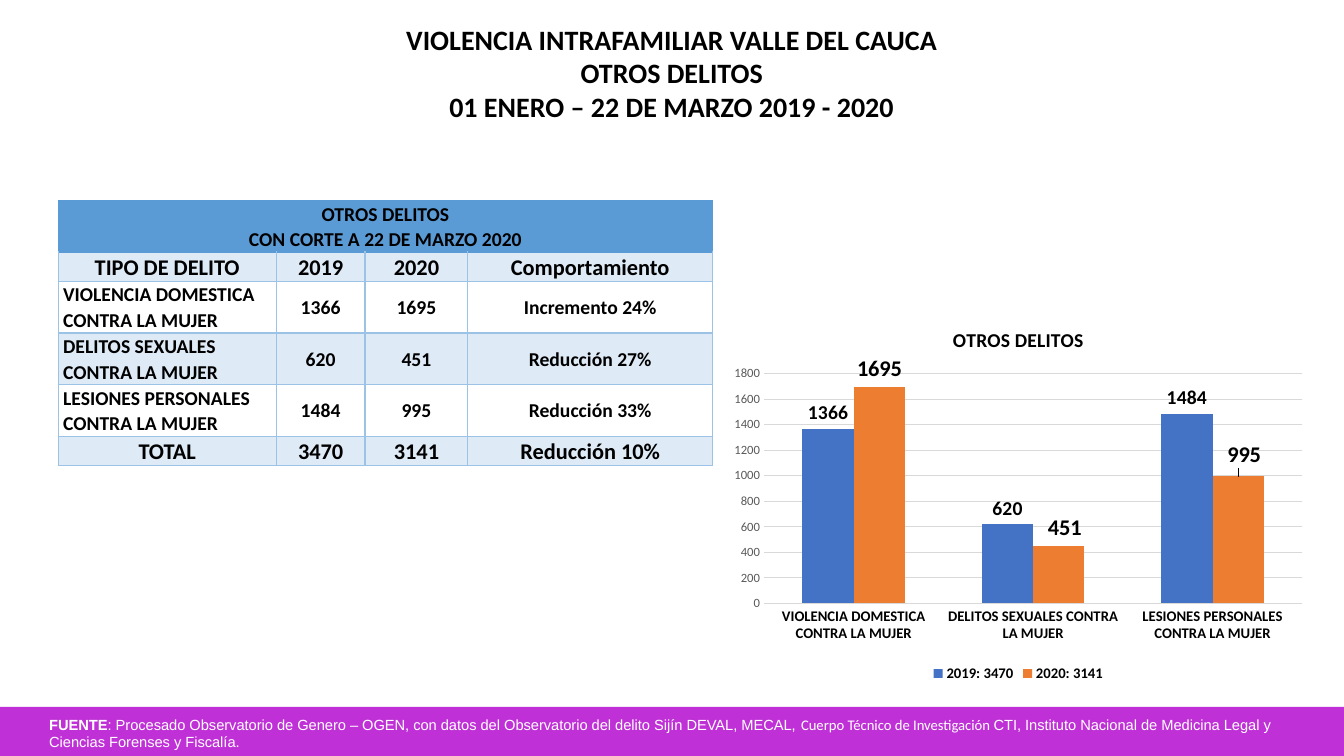
from lxml.etree import SubElement
from pptx import Presentation
from pptx.chart.data import CategoryChartData
from pptx.dml.color import RGBColor
from pptx.enum.chart import XL_CHART_TYPE, XL_LABEL_POSITION, XL_LEGEND_POSITION, XL_TICK_MARK
from pptx.enum.shapes import MSO_SHAPE
from pptx.enum.text import MSO_ANCHOR, PP_ALIGN
from pptx.oxml import parse_xml
from pptx.oxml.ns import nsdecls, qn
from pptx.util import Cm, Pt

BLACK, WHITE, PURPLE = "000000", "FFFFFF", "BF31D7"
HEADER_BLUE, PALE_BLUE, BORDER_BLUE = "5B9BD5", "DEEAF6", "9CC2E5"
SERIES_BLUE, SERIES_ORANGE = "4472C4", "ED7D31"
GRID_GREY, AXIS_GREY = "D9D9D9", "595959"


def color(value):
    return RGBColor.from_string(value)


def manual_layout(inner=False, **places):
    """Return a chart layout element with the given fractions."""
    target = '<c:layoutTarget val="inner"/>' if inner else ""
    modes = "".join(f'<c:{name}Mode val="edge"/>' for name in "xy") if inner else ""
    values = "".join(f'<c:{name} val="{value}"/>' for name, value in places.items())
    return parse_xml(f'<c:layout {nsdecls("c")}><c:manualLayout>{target}{modes}{values}'
                     "</c:manualLayout></c:layout>")


class SlideBuilder:
    """Hold the style and the current slide."""

    def __init__(self, slide, font_name="Calibri"):
        self.slide = slide
        self.font_name = font_name

    def style(self, font, size, font_color=BLACK, bold=True, name=None):
        font.name = name or self.font_name
        font.size = Pt(size)
        font.bold = bold
        font.color.rgb = color(font_color)

    def band(self, left, top, width, height, fill):
        shape = self.slide.shapes.add_shape(
            MSO_SHAPE.RECTANGLE, Cm(left), Cm(top), Cm(width), Cm(height))
        shape.shadow.inherit = False
        shape.fill.solid()
        shape.fill.fore_color.rgb = color(fill)
        shape.line.fill.background()

    def text_box(self, left, top, width, height):
        box = self.slide.shapes.add_textbox(Cm(left), Cm(top), Cm(width), Cm(height))
        box.text_frame.word_wrap = True
        return box.text_frame

    def title(self, place, text, size):
        frame = self.text_box(*place)
        frame.text = text
        for paragraph in frame.paragraphs:
            paragraph.alignment = PP_ALIGN.CENTER
            self.style(paragraph.runs[0].font, size)

    def footnote(self, place, pieces, size):
        paragraph = self.text_box(*place).paragraphs[0]
        for text, name, bold in pieces:
            run = paragraph.add_run()
            run.text = text
            self.style(run.font, size, WHITE, bold, name)

    def borders(self, cell, colors):
        properties = cell._tc.get_or_add_tcPr()
        for side, value in zip("LRTB", colors):
            line = SubElement(properties, qn(f"a:ln{side}"), w=str(Pt(1)))
            fill = SubElement(line, qn("a:solidFill"))
            SubElement(fill, qn("a:srgbClr"), val=value)

    def cell(self, cell, text, size, fill, alignment, border_colors):
        self.borders(cell, border_colors)
        if fill:
            cell.fill.solid()
            cell.fill.fore_color.rgb = color(fill)
        else:
            cell.fill.background()
        cell.margin_left = cell.margin_right = Cm(0.12)
        cell.margin_top = cell.margin_bottom = 0
        cell.vertical_anchor = MSO_ANCHOR.MIDDLE
        cell.text_frame.text = text
        for paragraph in cell.text_frame.paragraphs:
            paragraph.alignment = alignment
            paragraph.line_spacing = 1.07
            for run in paragraph.runs:
                self.style(run.font, size)

    def table(self, left, top, widths, heights, rows):
        table = self.slide.shapes.add_table(
            len(rows), len(widths), Cm(left), Cm(top), Cm(sum(widths)), Cm(sum(heights))).table
        table.first_row = table.horz_banding = False
        for column, width in zip(table.columns, widths):
            column.width = Cm(width)
        for row, height in zip(table.rows, heights):
            row.height = Cm(height)
        table.cell(0, 0).merge(table.cell(0, len(widths) - 1))
        for row_index, row in enumerate(rows):
            fill = HEADER_BLUE if row_index == 0 else PALE_BLUE if row_index % 2 else None
            if row_index == len(rows) - 1:
                fill = PALE_BLUE
            if row_index == 3:
                fill = PALE_BLUE
            size = 16 if row_index in (1, len(rows) - 1) else 14
            edges = [HEADER_BLUE if row_index == 0 else BORDER_BLUE] * 4
            if row_index == 1:
                edges[2] = HEADER_BLUE
            for column_index, text in enumerate(row):
                is_label = column_index == 0 and 1 < row_index < len(rows) - 1
                alignment = PP_ALIGN.LEFT if is_label else PP_ALIGN.CENTER
                self.cell(table.cell(row_index, column_index), text, size, fill, alignment, edges)

    def column_chart(self, place, title, categories, series_list):
        data = CategoryChartData()
        data.categories = categories
        for name, values, *_ in series_list:
            data.add_series(name, values)
        chart = self.slide.shapes.add_chart(
            XL_CHART_TYPE.COLUMN_CLUSTERED, *map(Cm, place), data).chart
        self.style(chart.font, 10, bold=False)
        chart.has_title = True
        chart.chart_title.text_frame.text = title
        self.style(chart.chart_title.text_frame.paragraphs[0].runs[0].font, 14)
        chart.has_legend = True
        chart.legend.position = XL_LEGEND_POSITION.BOTTOM
        chart.legend.include_in_layout = False
        self.style(chart.legend.font, 10.5)
        self.axes(chart)
        plot = chart.plots[0]
        plot.gap_width = 150
        plot.overlap = 0
        plot.vary_by_categories = False
        for series, (_, _, fill, size, shifts) in zip(plot.series, series_list):
            series.format.fill.solid()
            series.format.fill.fore_color.rgb = color(fill)
            self.labels(series, size, shifts)
        plot_area = chart._chartSpace.chart.plotArea
        for layout in plot_area.findall(qn("c:layout")):
            plot_area.remove(layout)
        plot_area.insert(0, manual_layout(True, x=0.07, y=0.17, w=0.91, h=0.61))

    def axes(self, chart):
        for axis in (chart.category_axis, chart.value_axis):
            axis.major_tick_mark = axis.minor_tick_mark = XL_TICK_MARK.NONE
            axis.format.line.fill.background()
        self.style(chart.category_axis.tick_labels.font, 10.5)
        value_axis = chart.value_axis
        self.style(value_axis.tick_labels.font, 9, AXIS_GREY, False)
        value_axis.minimum_scale, value_axis.maximum_scale = 0, 1800
        value_axis.major_unit = 200
        grid_line = value_axis.major_gridlines.format.line
        grid_line.color.rgb = color(GRID_GREY)
        grid_line.width = Pt(0.75)

    def labels(self, series, size, shifts):
        labels = series.data_labels
        labels.show_value = True
        labels.position = XL_LABEL_POSITION.OUTSIDE_END
        self.style(labels.font, size)
        for index, (x, y) in shifts.items():
            label = series.points[index].data_label
            self.style(label.font, size)
            label.position = XL_LABEL_POSITION.OUTSIDE_END
            element = labels._element.find(f"{qn('c:dLbl')}[{len(labels._element.findall(qn('c:dLbl')))}]")
            element.insert(1, manual_layout(x=x, y=y))


def main():
    presentation = Presentation()
    presentation.slide_width, presentation.slide_height = Cm(33.87), Cm(19.05)
    builder = SlideBuilder(presentation.slides.add_slide(presentation.slide_layouts[6]))
    crimes = ["VIOLENCIA DOMESTICA CONTRA LA MUJER", "DELITOS SEXUALES CONTRA LA MUJER",
              "LESIONES PERSONALES CONTRA LA MUJER"]
    counts_2019, counts_2020 = [1366, 620, 1484], [1695, 451, 995]
    changes = ["Incremento 24%", "Reducción 27%", "Reducción 33%"]

    builder.band(0, 17.81, 33.87, 1.24, PURPLE)
    builder.footnote((0.99, 17.91, 31.9, 1.14), [
        ("FUENTE", "Arial", True),
        (": Procesado Observatorio de Genero – OGEN, con datos del Observatorio del delito Sijín "
         "DEVAL, MECAL, ", "Arial", False),
        ("Cuerpo Técnico de Investigación ", "Calibri", False),
        ("CTI, Instituto Nacional de Medicina Legal y Ciencias Forenses y Fiscalía.", "Arial", False),
    ], 10.5)
    builder.table(1.47, 5.05, [5.49, 2.24, 2.59, 6.17], [1.3, 0.74, 1.3, 1.3, 1.3, 0.74], [
        ["OTROS DELITOS\nCON CORTE A 22 DE MARZO 2020"],
        ["TIPO DE DELITO", "2019", "2020", "Comportamiento"],
        *zip(crimes, map(str, counts_2019), map(str, counts_2020), changes),
        ["TOTAL", str(sum(counts_2019)), str(sum(counts_2020)), "Reducción 10%"],
    ])
    builder.column_chart((18.21, 7.8, 14.91, 9.5), "OTROS DELITOS", crimes, [
        ("2019: 3470", counts_2019, SERIES_BLUE, 14, {}),
        ("2020: 3141", counts_2020, SERIES_ORANGE, 16, {1: (0.01, 0), 2: (0.01, -0.01)}),
    ])
    builder.title((4.19, 0.43, 25.48, 2.82),
                  "VIOLENCIA INTRAFAMILIAR VALLE DEL CAUCA\nOTROS DELITOS\n"
                  "01 ENERO – 22 DE MARZO 2019 - 2020", 20)
    presentation.save("out.pptx")


if __name__ == "__main__":
    main()
